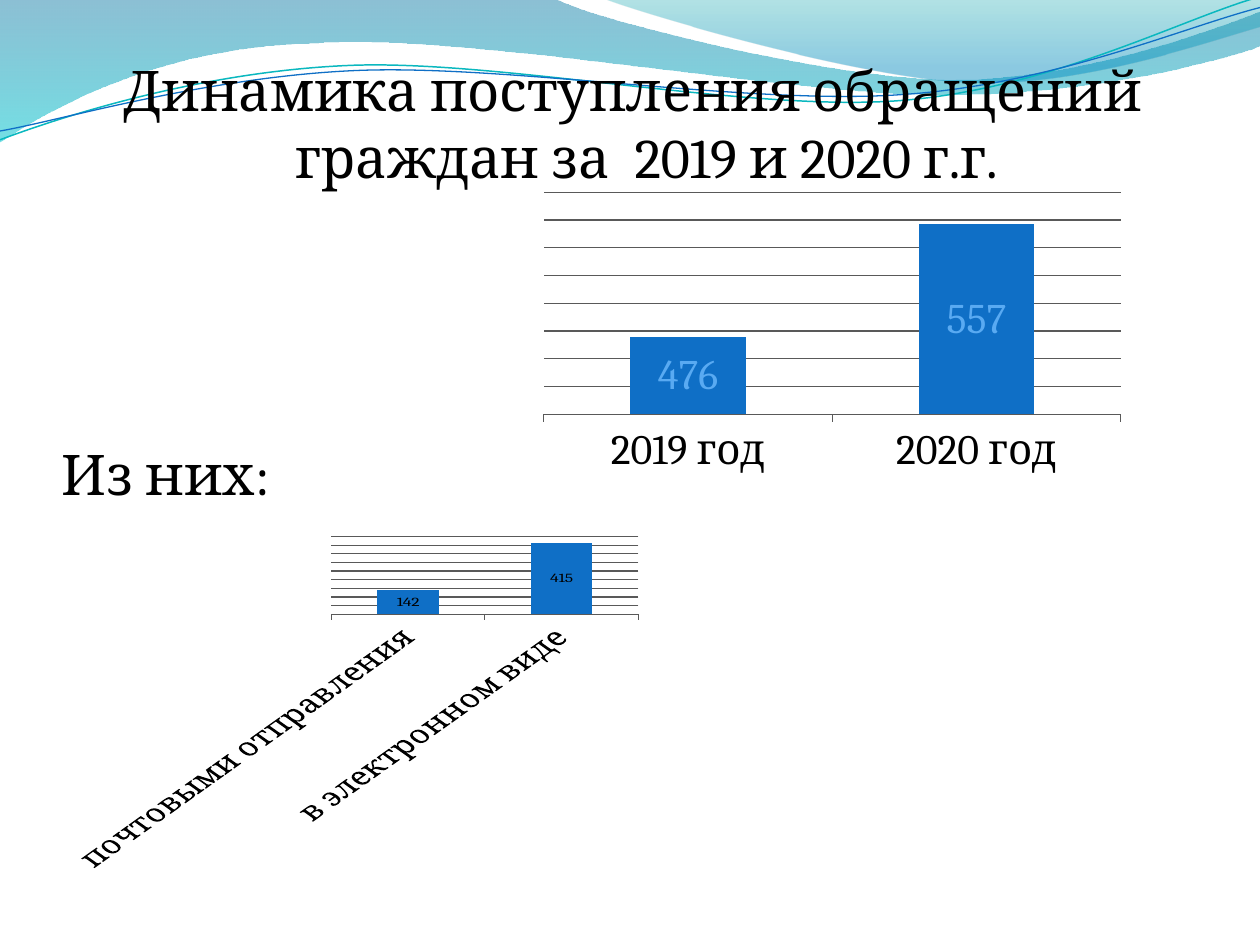
from lxml import etree
from pptx import Presentation
from pptx.chart.data import CategoryChartData
from pptx.dml.color import RGBColor
from pptx.enum.chart import XL_CHART_TYPE, XL_TICK_LABEL_POSITION, XL_TICK_MARK
from pptx.enum.text import PP_ALIGN
from pptx.oxml.ns import qn
from pptx.util import Pt

PX = 9144
FONT = "Cambria"
BLACK, BLUE, LIGHT_BLUE, GRID = "000000", "0F6FC6", "59AAF2", "595959"
COLUMN_STACKED = XL_CHART_TYPE.COLUMN_STACKED
LOW = XL_TICK_LABEL_POSITION.LOW
OUTSIDE = XL_TICK_MARK.OUTSIDE
CENTER = PP_ALIGN.CENTER

BANDS = [
    {
        "start": (0, 0),
        "segments": [
            [(440, -1)],
            [(476, 17), (664, 63), (758, 63)],
            [(853, 63), (958, 26), (1000, 9)],
            [(1001, 36)],
            [(983, 44), (870, 76), (746, 75)],
            [(622, 75), (382, 28), (257, 34)],
            [(129, 36), (46, 83), (-1, 113)],
            [(0, 0)],
        ],
        "stops": [(0, "0074A1", 45), (1, "00C6CF", 55)],
    },
    {
        "start": (479, -1),
        "segments": [
            [(509, 11), (682, 62), (769, 65)],
            [(856, 69), (961, 32), (1000, 21)],
            [(1000, 0)],
            [(479, -1)],
        ],
        "stops": [(0, "00A1A9", 30), (0.8, "008BBF", 45)],
    },
]

WAVES = [
    {
        "start": (0, 111),
        "segments": [
            [(48, 93), (158, 57), (277, 52)],
            [(395, 47), (593, 89), (713, 80)],
            [(833, 71), (938, 15), (998, -2)],
        ],
        "line": ("0AB8BF", 0.85),
    },
    {
        "start": (0, 104),
        "segments": [
            [(47, 96), (164, 61), (283, 56)],
            [(403, 51), (597, 84), (717, 75)],
            [(836, 67), (941, 21), (1000, 6)],
        ],
        "line": (BLUE, 0.75),
    },
]

TITLE = "Динамика поступления обращений граждан за  2019 и 2020 г.г."
TITLE_BOX = (47, 39, 903, 651)
TITLE_MARGIN, TITLE_INDENT = 30, -22
SUBTITLE = "Из них:"
SUBTITLE_BOX = (39, 344, 289, 64)

CHARTS = [
    {
        "box": (422, 148, 477, 234),
        "values": {"2019 год": 476, "2020 год": 557},
        "scale": (420, 580, 20),
        "label": (24, LIGHT_BLUE),
        "category_size": 24,
        "rotation": 0,
    },
    {
        "box": (47, 422, 469, 271),
        "values": {"почтовыми отправления": 142, "в электронном виде": 415},
        "scale": (0, 450, 50),
        "label": (10, BLACK),
        "category_size": 20,
        "rotation": -45,
    },
]


def color(value):
    return RGBColor.from_string(value)


def emu(lengths):
    return [length * PX for length in lengths]


def style_font(font, size, value):
    font.name = FONT
    font.size = Pt(size)
    font.color.rgb = color(value)


def add_outline(slide, item, close):
    ends = [emu(segment[-1]) for segment in item["segments"]]
    builder = slide.shapes.build_freeform(*emu(item["start"]))
    builder.add_line_segments(ends, close=close)
    shape = builder.convert_to_shape()
    shape.shadow.inherit = False
    lines = list(shape.element.spPr.iter(qn("a:lnTo")))
    for line, segment in zip(lines, item["segments"]):
        if len(segment) == 1:
            continue
        curve = etree.Element(qn("a:cubicBezTo"))
        for x, y in segment:
            point = etree.SubElement(curve, qn("a:pt"))
            point.set("x", str(x * PX - shape.left))
            point.set("y", str(y * PX - shape.top))
        line.getparent().replace(line, curve)
    return shape


def add_band(slide, band):
    shape = add_outline(slide, band, True)
    shape.line.fill.background()
    shape.fill.gradient()
    shape.fill.gradient_angle = 270
    for stop, (position, value, _) in zip(shape.fill.gradient_stops, band["stops"]):
        stop.position = position
        stop.color.rgb = color(value)
    gradient = shape.element.spPr.find(qn("a:gradFill"))
    for node, (_, _, opacity) in zip(gradient.iter(qn("a:srgbClr")), band["stops"]):
        etree.SubElement(node, qn("a:alpha")).set("val", str(opacity * 1000))


def add_wave(slide, wave):
    shape = add_outline(slide, wave, False)
    shape.fill.background()
    value, width = wave["line"]
    shape.line.color.rgb = color(value)
    shape.line.width = Pt(width)


def add_text(slide, box, text):
    frame = slide.shapes.add_textbox(*emu(box)).text_frame
    frame.word_wrap = True
    paragraph = frame.paragraphs[0]
    paragraph.text = text
    style_font(paragraph.font, 32, BLACK)
    return paragraph


def add_title(slide):
    paragraph = add_text(slide, TITLE_BOX, TITLE)
    paragraph.alignment = CENTER
    paragraph.space_before = Pt(6.4)
    properties = paragraph._p.get_or_add_pPr()
    properties.set("marL", str(TITLE_MARGIN * PX))
    properties.set("indent", str(TITLE_INDENT * PX))


def add_column_chart(slide, item):
    data = CategoryChartData()
    data.categories = list(item["values"])
    data.add_series("Series 1", list(item["values"].values()))
    chart = slide.shapes.add_chart(COLUMN_STACKED, *emu(item["box"]), data).chart
    chart.has_legend = False
    chart.has_title = False
    style_font(chart.font, item["label"][0], BLACK)

    plot = chart.plots[0]
    plot.vary_by_categories = False
    plot.gap_width = 150
    plot.overlap = 100
    plot.has_data_labels = True
    plot.data_labels.show_value = True
    style_font(plot.data_labels.font, *item["label"])
    fill = plot.series[0].format.fill
    fill.solid()
    fill.fore_color.rgb = color(BLUE)

    value_axis = chart.value_axis
    value_axis.visible = False
    value_axis.minimum_scale, value_axis.maximum_scale, value_axis.major_unit = item["scale"]
    value_axis.has_major_gridlines = True
    category_axis = chart.category_axis
    category_axis.major_tick_mark = OUTSIDE
    category_axis.tick_label_position = LOW
    style_font(category_axis.tick_labels.font, item["category_size"], BLACK)
    for line in (value_axis.major_gridlines.format.line, category_axis.format.line):
        line.color.rgb = color(GRID)
        line.width = Pt(0.75)
    if item["rotation"]:
        body = category_axis._element.find(qn("c:txPr")).find(qn("a:bodyPr"))
        body.set("rot", str(item["rotation"] * 60000))


def main():
    presentation = Presentation()
    presentation.slide_width, presentation.slide_height = emu((1000, 750))
    slide = presentation.slides.add_slide(presentation.slide_layouts[6])
    for band in BANDS:
        add_band(slide, band)
    for wave in WAVES:
        add_wave(slide, wave)
    add_title(slide)
    for item in CHARTS:
        add_column_chart(slide, item)
    add_text(slide, SUBTITLE_BOX, SUBTITLE)
    presentation.save("out.pptx")


if __name__ == "__main__":
    main()
